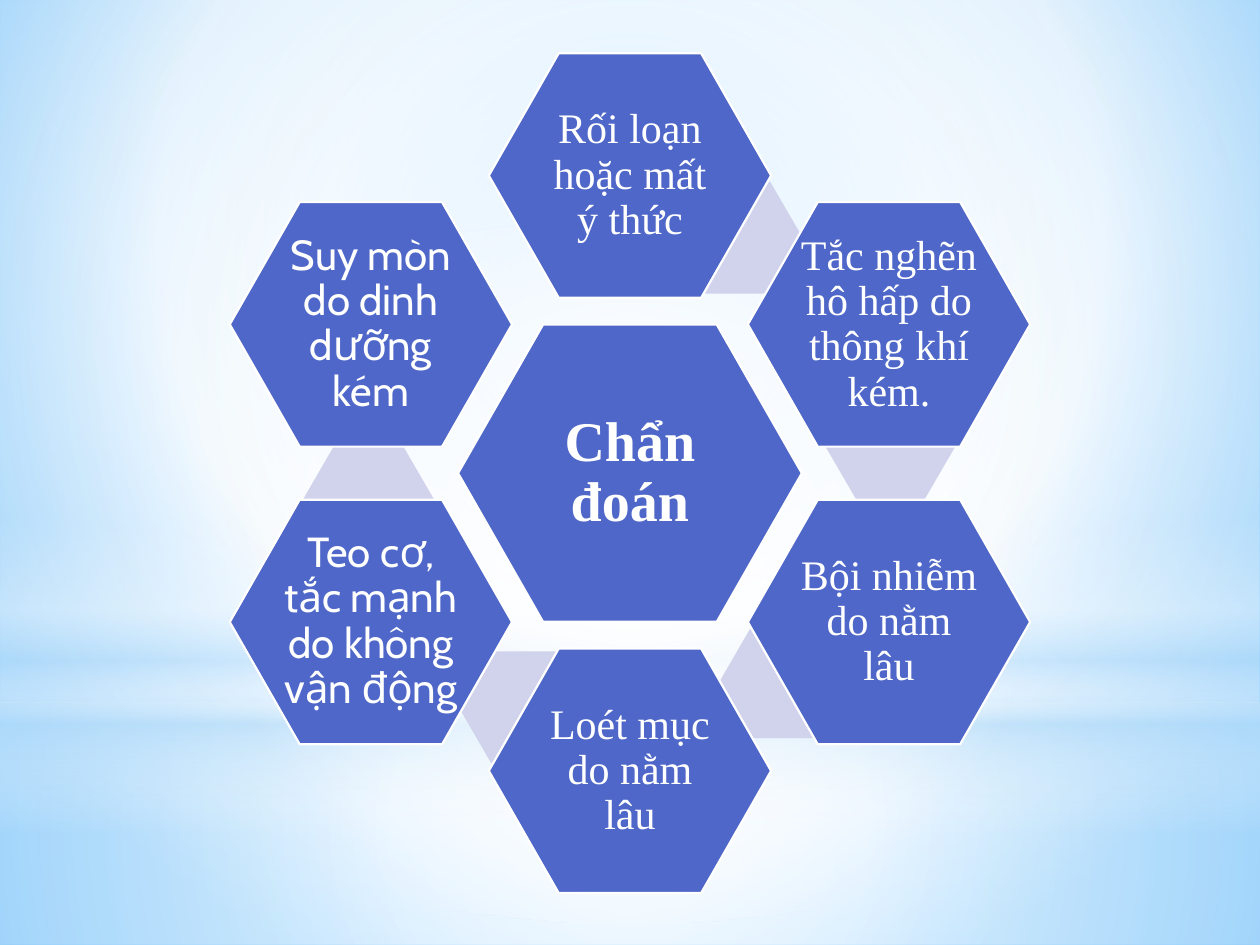
from math import cos, radians, sin

from lxml import etree
from pptx import Presentation
from pptx.dml.color import RGBColor
from pptx.enum.shapes import MSO_SHAPE
from pptx.enum.text import MSO_ANCHOR, PP_ALIGN
from pptx.oxml.ns import qn
from pptx.util import Cm, Pt

HEX = MSO_SHAPE.HEXAGON
RECT = MSO_SHAPE.RECTANGLE
OVAL = MSO_SHAPE.OVAL
MID = MSO_ANCHOR.MIDDLE
MIDDLE = PP_ALIGN.CENTER

BLUE, PALE, WHITE, SKY = "4E67C8", "D0D3EB", "FFFFFF", "B4DCFA"
TIMES, CABIN = "Times New Roman", "Cabin"
WIDE, HIGH = 25.4, 19.05
MID_X, MID_Y, RING = 12.7, 9.54, 6.0
CENTER = (50, 50, 50, 50)


def color(code):
    return RGBColor.from_string(code)


def write(shape, text, font=TIMES, size=24, bold=False, ink=WHITE):
    frame = shape.text_frame
    frame.word_wrap = True
    frame.vertical_anchor = MID
    frame.margin_left = frame.margin_right = Cm(0.08)
    frame.margin_top = frame.margin_bottom = Cm(0.08)
    para = frame.paragraphs[0]
    para.alignment = MIDDLE
    para.line_spacing = 0.9
    run = para.add_run()
    run.text = text
    run.font.name = font
    run.font.size = Pt(size)
    run.font.bold = bold
    run.font.color.rgb = color(ink)


def blend(owner, stops, focus=None, angle=90):
    grad = owner.xpath(".//a:gradFill")[0]
    for child in list(grad):
        grad.remove(child)
    items = etree.SubElement(grad, qn("a:gsLst"))
    for place, code, alpha in stops:
        stop = etree.SubElement(items, qn("a:gs"), pos=str(place * 1000))
        tone = etree.SubElement(stop, qn("a:srgbClr"), val=code)
        if alpha < 100:
            etree.SubElement(tone, qn("a:alpha"), val=str(alpha * 1000))
    if focus:
        path = etree.SubElement(grad, qn("a:path"), path="circle")
        sides = {side: str(part * 1000) for side, part in zip("ltrb", focus)}
        etree.SubElement(path, qn("a:fillToRect"), **sides)
    else:
        etree.SubElement(grad, qn("a:lin"), ang=str(angle * 60000), scaled="0")


class Page:
    def __init__(self, slide, fill=BLUE, line=WHITE):
        self.slide, self.fill, self.line = slide, fill, line

    def back(self, stops, focus):
        self.slide.background.fill.gradient()
        blend(self.slide.element, stops, focus)

    def shape(self, kind, x, y, w, h):
        shape = self.slide.shapes.add_shape(kind, Cm(x), Cm(y), Cm(w), Cm(h))
        shape.shadow.inherit = False
        shape.line.fill.background()
        return shape

    def glow(self, kind, top, height, stops, focus=None):
        shape = self.shape(kind, 0, top, WIDE, height)
        shape.fill.gradient()
        blend(shape.element, stops, focus)

    def link(self, x, y):
        shape = self.shape(HEX, x, y, 2.62, 2.26)
        shape.adjustments[0] = 0.29
        shape.fill.solid()
        shape.fill.fore_color.rgb = color(PALE)

    def cell(self, text, x, y, w, h, **form):
        shape = self.shape(HEX, x - w / 2, y - h / 2, w, h)
        shape.adjustments[0] = 0.286
        shape.fill.solid()
        shape.fill.fore_color.rgb = color(self.fill)
        shape.line.color.rgb = color(self.line)
        shape.line.width = Pt(1.25)
        write(shape, text, **form)


def main():
    deck = Presentation()
    deck.slide_width, deck.slide_height = Cm(WIDE), Cm(HIGH)
    page = Page(deck.slides.add_slide(deck.slide_layouts[6]))

    page.back([(0, "9ED5FF", 100), (60, WHITE, 100), (100, "5BB9FF", 100)],
              (20, 10, 20, 60))
    page.glow(RECT, 14.17, 4.88,
              [(0, WHITE, 91), (37, WHITE, 76), (100, SKY, 79)], CENTER)
    page.glow(RECT, 0, 14.17,
              [(0, WHITE, 89), (48, WHITE, 62), (100, SKY, 79)], CENTER)
    page.glow(RECT, 10.46, 6.35,
              [(0, WHITE, 0), (29, WHITE, 30), (45, SKY, 40),
               (55, WHITE, 26), (65, SKY, 60), (100, WHITE, 0)])
    page.glow(OVAL, 4.45, 14.17, [(0, WHITE, 100), (56, WHITE, 0)], CENTER)

    links = [(13.56, 3.66), (16.64, 7.87), (14.5, 12.62),
             (9.25, 13.13), (6.12, 8.92)]
    for spot in links:
        page.link(*spot)

    page.cell("Chẩn đoán", MID_X, MID_Y, 6.93, 5.99, size=32, bold=True)
    cells = [
        ("Rối loạn hoặc mất ý thức", TIMES),
        ("Tắc nghẽn hô hấp do thông khí kém.", TIMES),
        ("Bội nhiễm do nằm lâu", TIMES),
        ("Loét mục do nằm lâu", TIMES),
        ("Teo cơ, tắc mạnh do không vận động", CABIN),
        ("Suy mòn do dinh dưỡng kém", CABIN),
    ]
    for i, (text, font) in enumerate(cells):
        turn = radians(60 * i)
        page.cell(text, MID_X + RING * sin(turn) * 1.005,
                  MID_Y - RING * cos(turn), 5.69, 4.93, font=font)

    deck.save("out.pptx")


if __name__ == "__main__":
    main()
